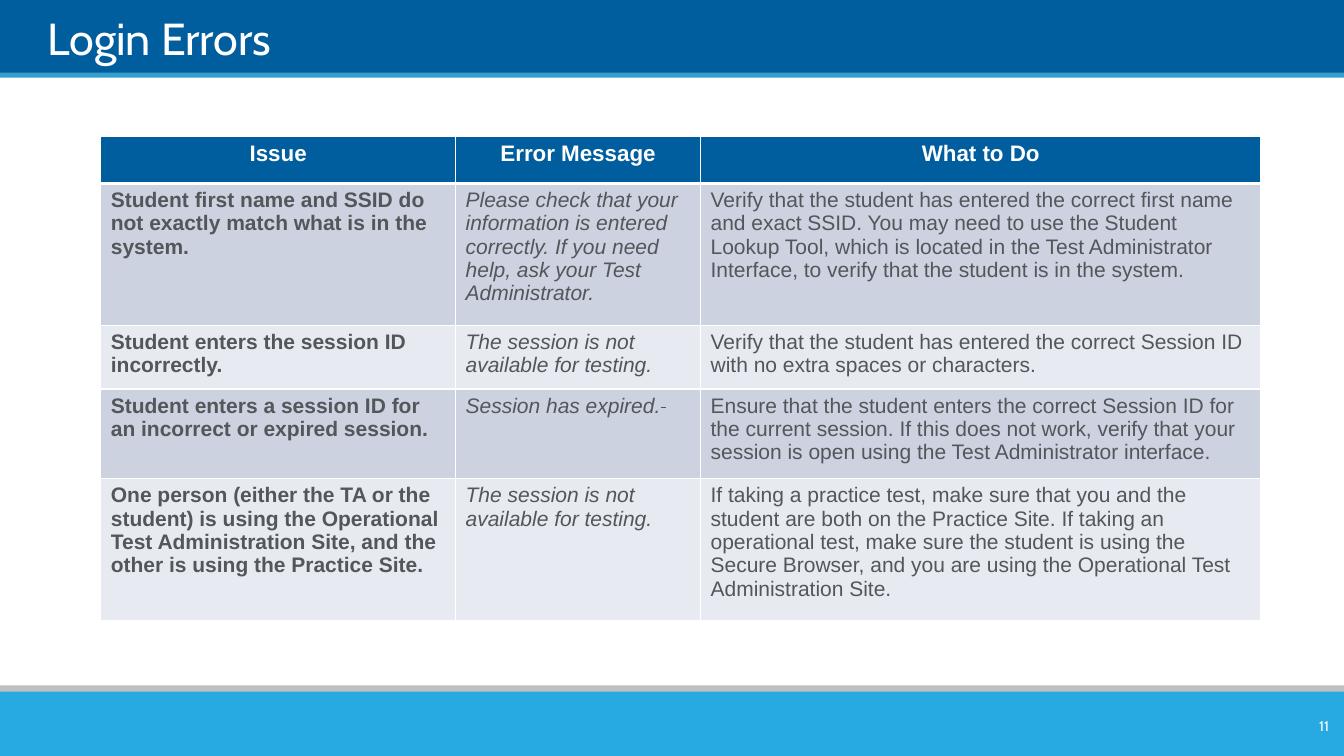
"""Build the Login Errors slide: banded frame, title and troubleshooting table."""
from dataclasses import dataclass

from lxml import etree
from pptx import Presentation
from pptx import util as u
from pptx.dml.color import RGBColor
from pptx.enum import shapes, text
from pptx.oxml import ns

NAVY = RGBColor(0x00, 0x5E, 0x9E)
BLUE = RGBColor(0x35, 0xA0, 0xCE)
SKY = RGBColor(0x27, 0xAA, 0xE1)
SILVER = RGBColor(0xBF, 0xBF, 0xBF)
WHITE = RGBColor(0xFF, 0xFF, 0xFF)
GRAPHITE = RGBColor(0x53, 0x56, 0x5A)
DARK_ROW = RGBColor(0xCC, 0xD2, 0xDF)
LIGHT_ROW = RGBColor(0xE7, 0xEA, 0xF0)

SLIDE_WIDTH, SLIDE_HEIGHT = u.Inches(13.333), u.Inches(7.5)


@dataclass(frozen=True)
class Area:
    """A rectangle in percent of the slide's width and height."""
    left: float
    top: float
    width: float
    height: float

    def lengths(self) -> tuple:
        return across(self.left), down(self.top), across(self.width), down(self.height)


@dataclass(frozen=True)
class Band:
    """A full-width strip of the slide frame."""
    top: float
    height: float
    color: RGBColor


@dataclass(frozen=True)
class LoginError:
    """One row of the table."""
    issue: str
    message: str
    action: str
    height: float
    struck_tail: str = ""


BANDS = (
    Band(-0.13, 10, NAVY),
    Band(9.6, 0.67, BLUE),
    Band(90.67, 1.87, SILVER),
    Band(91.47, 8.53, SKY),
)
TITLE_AREA = Area(3.53, 0.93, 90.4, 7.6)
NUMBER_AREA = Area(93.85, 94, 5.78, 4)
TABLE_AREA = Area(7.5, 18, 86.33, 64.14)
COLUMN_WIDTHS = (26.4, 18.23, 41.7)

HEADER = LoginError("Issue", "Error Message", "What to Do", 6.27)
ERRORS = (
    LoginError(
        "Student first name and SSID do not exactly match what is in the system.",
        "Please check that your information is entered correctly. If you need help, "
        "ask your Test Administrator.",
        "Verify that the student has entered the correct first name and exact SSID. "
        "You may need to use the Student Lookup Tool, which is located in the Test "
        "Administrator Interface, to verify that the student is in the system.",
        18.8),
    LoginError(
        "Student enters the session ID incorrectly.",
        "The session is not available for testing.",
        "Verify that the student has entered the correct Session ID with no extra "
        "spaces or characters.",
        8.4),
    LoginError(
        "Student enters a session ID for an incorrect or expired session.",
        "Session has expired.",
        "Ensure that the student enters the correct Session ID for the current session. "
        "If this does not work, verify that your session is open using the Test "
        "Administrator interface.",
        11.87, struck_tail=" "),
    LoginError(
        "One person (either the TA or the student) is using the Operational Test "
        "Administration Site, and the other is using the Practice Site.",
        "The session is not available for testing.",
        "If taking a practice test, make sure that you and the student are both on the "
        "Practice Site. If taking an operational test, make sure the student is using the "
        "Secure Browser, and you are using the Operational Test Administration Site.",
        18.8),
)

CAPTION = {"name": "Cabin", "bold": False}
HEADING = {"name": "Arial", "size": u.Pt(16), "bold": True, "italic": False}
BODY = {"name": "Arial", "size": u.Pt(15)}
COLUMN_STYLES = (
    {**BODY, "bold": True, "italic": False},
    {**BODY, "bold": False, "italic": True},
    {**BODY, "bold": False, "italic": False},
)


def across(percent: float) -> int:
    """Turn a share of the slide width into a length."""
    return round(SLIDE_WIDTH * percent / 100)


def down(percent: float) -> int:
    """Turn a share of the slide height into a length."""
    return round(SLIDE_HEIGHT * percent / 100)


def set_values(target, values: dict) -> None:
    """Set every named attribute on the target."""
    for name, value in values.items():
        setattr(target, name, value)


def add_run(paragraph, words: str, style: dict, color: RGBColor):
    """Add a formatted run."""
    run = paragraph.add_run()
    run.text = words
    set_values(run.font, style)
    run.font.color.rgb = color
    return run


def add_band(slide, band: Band) -> None:
    """Draw one strip of the frame."""
    area = Area(0, band.top, 100, band.height)
    shape = slide.shapes.add_shape(shapes.MSO_SHAPE.RECTANGLE, *area.lengths())
    shape.shadow.inherit = False
    shape.fill.solid()
    shape.fill.fore_color.rgb = band.color
    shape.line.fill.background()


def format_title(slide) -> None:
    """Place the title placeholder over the frame and fill it."""
    title = slide.shapes.title
    slide.shapes._spTree.append(title._element)
    set_values(title, dict(zip(("left", "top", "width", "height"), TITLE_AREA.lengths())))
    set_values(title.text_frame, {
        "margin_left": 0, "margin_top": 0, "margin_right": 0, "margin_bottom": 0,
        "vertical_anchor": text.MSO_ANCHOR.BOTTOM, "auto_size": text.MSO_AUTO_SIZE.NONE})
    paragraph = title.text_frame.paragraphs[0]
    paragraph.alignment = text.PP_ALIGN.LEFT
    add_run(paragraph, "Login Errors", {**CAPTION, "size": u.Pt(32)}, WHITE)


def add_slide_number(slide) -> None:
    """Write the slide number in the footer."""
    frame = slide.shapes.add_textbox(*NUMBER_AREA.lengths()).text_frame
    set_values(frame, {"word_wrap": True, "vertical_anchor": text.MSO_ANCHOR.MIDDLE})
    paragraph = frame.paragraphs[0]
    paragraph.alignment = text.PP_ALIGN.RIGHT
    add_run(paragraph, "11", {**CAPTION, "size": u.Pt(10)}, WHITE)


def format_cell(cell, fill: RGBColor, top: float, bottom: float) -> None:
    """Give a cell white borders and a plain fill."""
    properties = cell._tc.get_or_add_tcPr()
    for side, points in {"lnL": 1, "lnR": 1, "lnT": top, "lnB": bottom}.items():
        line = etree.SubElement(properties, ns.qn(f"a:{side}"), w=str(u.Pt(points)))
        solid = etree.SubElement(line, ns.qn("a:solidFill"))
        etree.SubElement(solid, ns.qn("a:srgbClr"), val=str(WHITE))
    cell.fill.solid()
    cell.fill.fore_color.rgb = fill


def add_error_table(slide) -> None:
    """Draw the table of login errors."""
    rows = (HEADER, *ERRORS)
    table = slide.shapes.add_table(
        len(rows), len(COLUMN_WIDTHS), *TABLE_AREA.lengths()).table
    for column, width in zip(table.columns, COLUMN_WIDTHS):
        column.width = across(width)
    for row_index, error in enumerate(rows):
        table.rows[row_index].height = down(error.height)
        is_header = row_index == 0
        fill = NAVY if is_header else (LIGHT_ROW, DARK_ROW)[row_index % 2]
        color = WHITE if is_header else GRAPHITE
        for column_index, words in enumerate((error.issue, error.message, error.action)):
            cell = table.cell(row_index, column_index)
            format_cell(cell, fill, 3 if row_index == 1 else 1, 3 if is_header else 1)
            style = HEADING if is_header else COLUMN_STYLES[column_index]
            paragraph = cell.text_frame.paragraphs[0]
            paragraph.alignment = text.PP_ALIGN.CENTER if is_header else text.PP_ALIGN.LEFT
            add_run(paragraph, words, style, color)
            if error.struck_tail and words == error.message:
                tail = add_run(paragraph, error.struck_tail, style, color)
                tail.font._element.set("strike", "sngStrike")


def main() -> None:
    """Build and save the presentation."""
    presentation = Presentation()
    set_values(presentation, {"slide_width": SLIDE_WIDTH, "slide_height": SLIDE_HEIGHT})
    slide = presentation.slides.add_slide(presentation.slide_layouts[5])
    for band in BANDS:
        add_band(slide, band)
    format_title(slide)
    add_slide_number(slide)
    add_error_table(slide)
    presentation.save("out.pptx")


if __name__ == "__main__":
    main()
